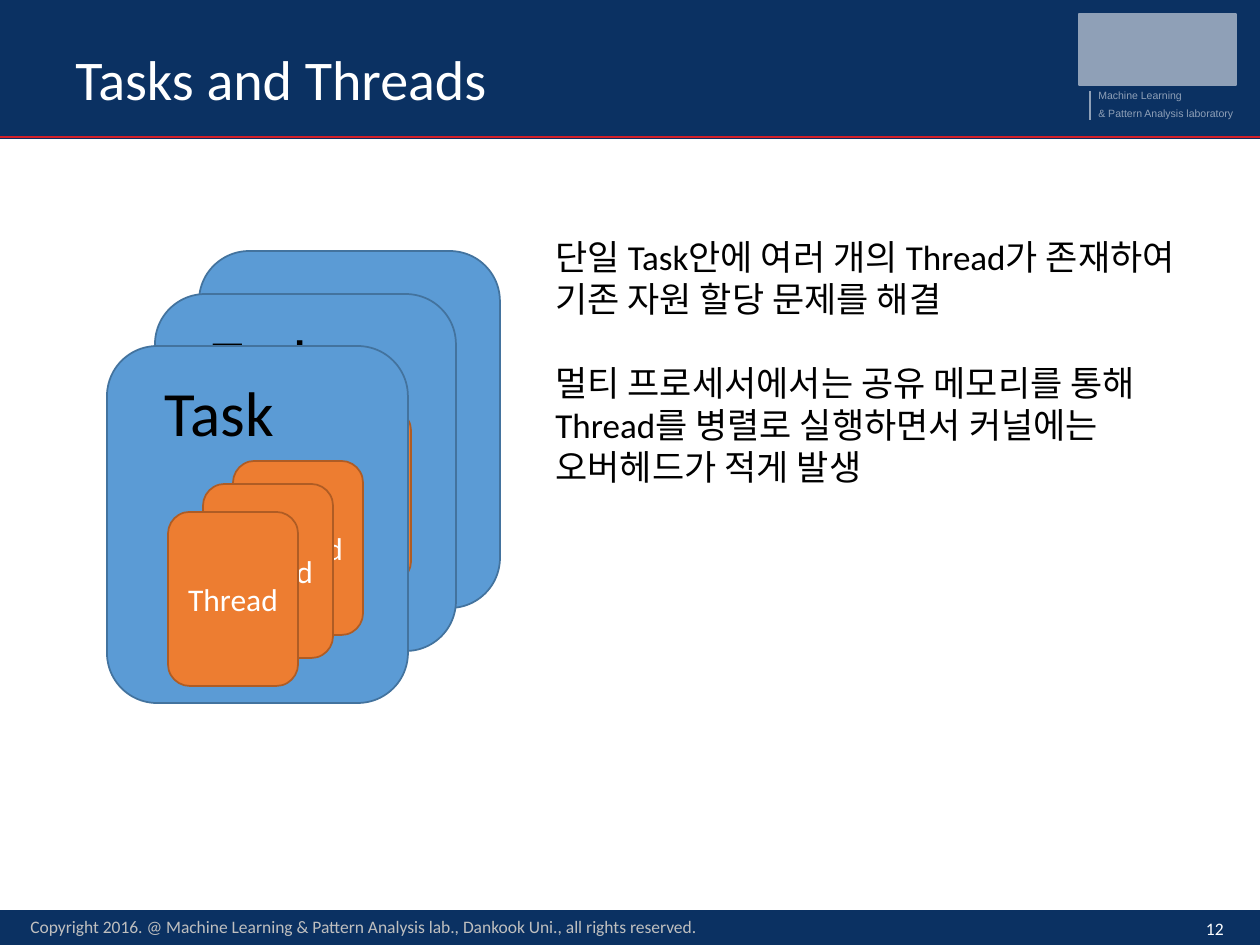
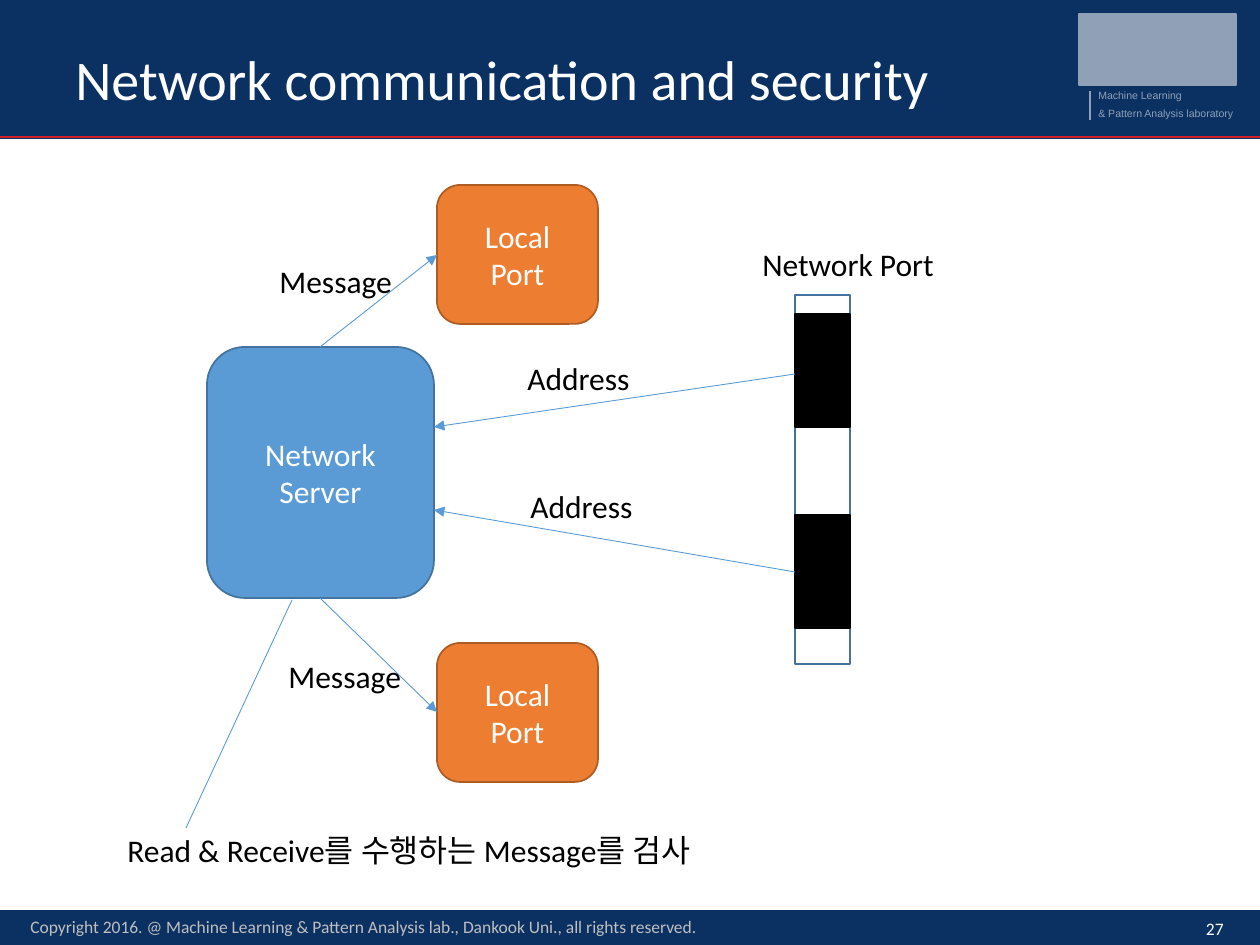
from collections import namedtuple

from lxml import etree
from pptx import Presentation
from pptx import util as u
from pptx.dml.color import RGBColor
from pptx.enum import shapes, text
from pptx.oxml import ns

PX = 914400 / 126
NAVY = RGBColor(0x0B, 0x31, 0x62)
RED = RGBColor(0xD4, 0x1F, 0x28)
MUTED = RGBColor(0x8F, 0xA0, 0xB7)
GRAY = RGBColor(0xBF, 0xBF, 0xBF)
WHITE = RGBColor(0xFF, 0xFF, 0xFF)
BLACK = RGBColor(0x00, 0x00, 0x00)
BLUE = RGBColor(0x5B, 0x9B, 0xD5)
BLUE_EDGE = RGBColor(0x43, 0x73, 0x9E)
ORANGE = RGBColor(0xED, 0x7D, 0x31)
ORANGE_EDGE = RGBColor(0xAF, 0x5C, 0x24)

RECT = shapes.MSO_SHAPE.RECTANGLE
ROUNDED = shapes.MSO_SHAPE.ROUNDED_RECTANGLE
MIDDLE = text.MSO_ANCHOR.MIDDLE
CENTER = text.PP_ALIGN.CENTER
COPYRIGHT = ("Copyright 2016. @ Machine Learning & Pattern Analysis lab., "
             "Dankook Uni., all rights reserved.")


class Box(namedtuple("Box", "x y w h")):
    """A rectangle in px."""

    def inner(self, dx, dy, w, h):
        """Return a box offset from this one's corner."""
        return Box(self.x + dx, self.y + dy, w, h)

    def emu(self):
        """Return left, top, width and height in EMU."""
        return [emu(length) for length in self]


def emu(px):
    """Turn px into EMU."""
    return u.Emu(round(px * PX))


def write(frame, wording, size, color, align=None, font="Calibri", gap=0):
    """Fill a text frame and format its paragraphs."""
    frame.text = wording
    for index, paragraph in enumerate(frame.paragraphs):
        paragraph.alignment = align
        paragraph.font.size = u.Pt(size)
        paragraph.font.name = font
        paragraph.font.color.rgb = color
        if index:
            paragraph.space_before = u.Pt(gap)


def add_label(slide, box, wording, size=18, color=BLACK, anchor=None,
              wrap=True, **style):
    """Add a text box and return its frame."""
    frame = slide.shapes.add_textbox(*box.emu()).text_frame
    frame.word_wrap = wrap
    frame.vertical_anchor = anchor
    write(frame, wording, size, color, **style)
    return frame


def add_block(slide, box, fill, edge, wording="", kind=RECT):
    """Add a filled and outlined shape with an optional centred caption."""
    block = slide.shapes.add_shape(kind, *box.emu())
    block.shadow.inherit = False
    block.fill.solid()
    block.fill.fore_color.rgb = fill
    block.line.color.rgb = edge
    block.line.width = u.Pt(1)
    if wording:
        write(block.text_frame, wording, 18, WHITE, CENTER)


def add_line(slide, box, start, end, color, width, arrow=False):
    """Join two points of a box, with an arrowhead at the end if asked."""
    points = [emu(box[i % 2] + value) for i, value in enumerate((*start, *end))]
    line = slide.shapes.add_connector(shapes.MSO_CONNECTOR.STRAIGHT, *points)
    line.line.color.rgb = color
    line.line.width = u.Pt(width)
    if arrow:
        etree.SubElement(line.line._get_or_add_ln(), ns.qn("a:tailEnd"),
                         type="triangle")
    etree.SubElement(line._element.spPr, ns.qn("a:effectLst"))


def add_lab_mark(slide, box):
    """Place the plain mark and the laboratory name in the header."""
    add_block(slide, box.inner(0, 0, 157, 71), MUTED, MUTED)
    for row, wording in enumerate(("Machine Learning",
                                   "& Pattern Analysis laboratory")):
        add_label(slide, box.inner(7, 69 + 18 * row, 163, 25), wording, 6,
                  MUTED, wrap=False, font="Arial")
    add_line(slide, box, (11, 77), (11, 106), MUTED, 1.5)


def add_header(slide, box, title):
    """Draw the top band with its rule, title and laboratory mark."""
    add_block(slide, box, NAVY, NAVY)
    add_line(slide, box, (0, 137), (box.w, 137), RED, 1.5)
    add_lab_mark(slide, box.inner(1079, 14, 157, 106))
    frame = add_label(slide, box.inner(63, 26, 1023, 93), title, 32, WHITE,
                      text.MSO_ANCHOR.BOTTOM)
    frame.paragraphs[0].line_spacing = 0.9


def add_footer(slide, box, number):
    """Draw the bottom band with the copyright line and page number."""
    add_block(slide, box, NAVY, NAVY)
    add_label(slide, box.inner(1149, 0, 87, 34), str(number), 10, WHITE,
              MIDDLE, align=text.PP_ALIGN.RIGHT)
    add_label(slide, box.inner(18, -9, 696, 50), COPYRIGHT, 10, GRAY, MIDDLE)


def add_task(slide, box, threads):
    """Draw a task card holding threads at the given offsets."""
    add_block(slide, box, BLUE, BLUE_EDGE, kind=ROUNDED)
    add_label(slide, box.inner(-14, 21, 253, 89), "Task", 36, align=CENTER)
    for dx, dy in threads:
        add_block(slide, box.inner(dx, dy, 130, 174), ORANGE, ORANGE_EDGE,
                  "Thread", ROUNDED)


def add_task_stack(slide, box):
    """Stack three task cards from back to front."""
    threads = [(126, 115), (96, 138), (61, 166)]
    for dx, dy, count in ((92, 0, 1), (48, 43, 1), (0, 95, 3)):
        add_task(slide, box.inner(dx, dy, 301, 357), threads[:count])


def add_port_column(slide, box):
    """Draw the network port with its two occupied slots."""
    add_block(slide, box, WHITE, BLUE_EDGE)
    for dy in (19, 220):
        add_block(slide, box.inner(0, dy, box.w, 113), BLACK, BLACK)


def add_network(slide, box):
    """Draw the server, its ports and the messages between them."""
    add_block(slide, box.inner(92, 162, 227, 251), BLUE, BLUE_EDGE,
              "Network Server", ROUNDED)
    for dy in (0, 458):
        add_block(slide, box.inner(322, dy, 161, 139), ORANGE, ORANGE_EDGE,
                  "Local Port", ROUNDED)
    add_port_column(slide, box.inner(680, 110, 55, 369))
    for start, end in (((680, 189), (319, 242)), ((680, 387), (319, 325)),
                       ((205, 413), (322, 527)), ((205, 162), (322, 70))):
        add_line(slide, box, start, end, BLUE, 0.5, arrow=True)
    add_line(slide, box, (177, 415), (71, 643), BLUE, 0.5)
    for dx, dy, width, wording in (
            (400, 168, 145, "Address"), (403, 296, 145, "Address"),
            (635, 54, 207, "Network Port"),
            (152, 71, 145, "Message"), (161, 466, 145, "Message"),
            (0, 640, 656, "Read & Receive를 수행하는 Message를 검사")):
        add_label(slide, box.inner(dx, dy, width, 50), wording)


def add_slide(deck, title, number):
    """Add a blank slide with the shared bands."""
    slide = deck.slides.add_slide(deck.slide_layouts[6])
    add_header(slide, Box(0, 0, 1260, 138), title)
    add_footer(slide, Box(0, 911, 1260, 33), number)
    return slide


def main():
    """Build and save the deck."""
    deck = Presentation()
    deck.slide_width, deck.slide_height = emu(1260), emu(945)

    tasks = add_slide(deck, "Tasks and Threads", 12)
    add_task_stack(tasks, Box(107, 251, 393, 452))
    add_label(tasks, Box(543, 229, 672, 267),
              "단일 Task안에 여러 개의 Thread가 존재하여 기존 자원 할당 문제를 해결\n"
              "멀티 프로세서에서는 공유 메모리를 통해 Thread를 병렬로 실행하면서 "
              "커널에는 오버헤드가 적게 발생", 20, gap=24)

    network = add_slide(deck, "Network communication and security", 27)
    add_network(network, Box(115, 185, 842, 690))

    deck.save("out.pptx")


if __name__ == "__main__":
    main()
